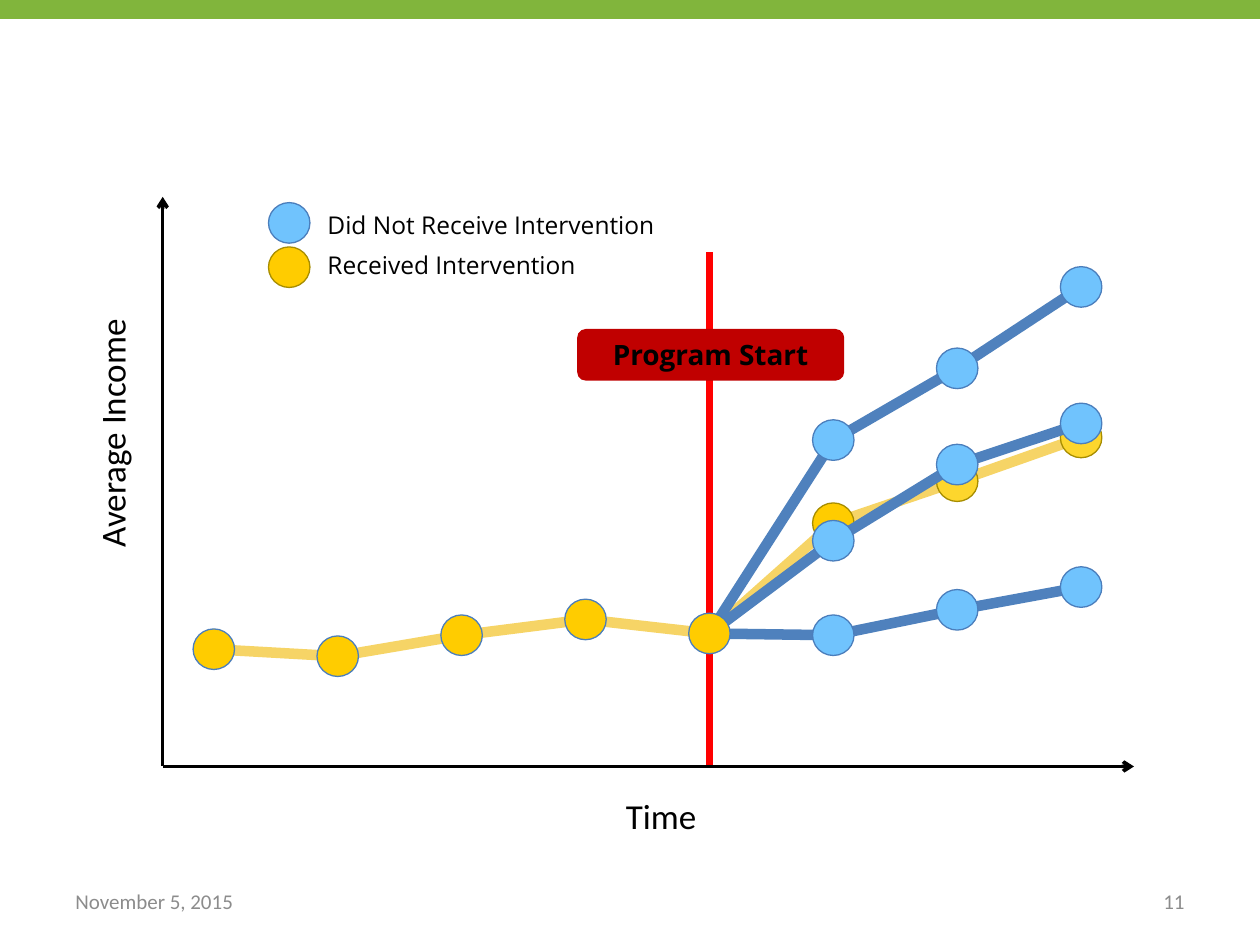
"""Builds a slide charting income over time with and without an intervention."""
from itertools import pairwise

from lxml import etree
from pptx import Presentation
from pptx.dml.color import RGBColor
from pptx.enum import shapes, text
from pptx.oxml import ns
from pptx.util import Pt

COLORS = {
    "band": "81B53C", "footer": "8C8C8C", "black": "000000", "start": "FF0000",
    "label": "C00000", "gold": "FFCC00", "light_gold": "FDD62D",
    "gold_edge": "A78D00", "gold_line": "F6D466", "blue": "70C3FD",
    "blue_edge": "4B7EBC", "blue_line": "4F81BD",
}
DOT_WIDTH, DOT_HEIGHT = 23.7, 23.2
FIRST_X, STEP_X = 122.2, 70.8
START = 4


class IncomeSlide:
    """Holds the style and the current slide."""

    def __init__(self, slide):
        self.slide = slide

    def color(self, name):
        return RGBColor.from_string(COLORS[name])

    def shape(self, kind, left, top, width, height, fill, edge=None):
        item = self.slide.shapes.add_shape(
            kind, Pt(left), Pt(top), Pt(width), Pt(height))
        item.shadow.inherit = False
        item.fill.solid()
        item.fill.fore_color.rgb = self.color(fill)
        if edge:
            item.line.color.rgb = self.color(edge)
            item.line.width = Pt(0.75)
        else:
            item.line.fill.background()
        return item

    def dot(self, x, y, fill, edge):
        self.shape(shapes.MSO_SHAPE.OVAL, x - DOT_WIDTH / 2, y - DOT_HEIGHT / 2,
                   DOT_WIDTH, DOT_HEIGHT, fill, edge)

    def line(self, begin, end, color, width, arrow=None):
        link = self.slide.shapes.add_connector(
            shapes.MSO_CONNECTOR.STRAIGHT, *(Pt(v) for v in (*begin, *end)))
        link.line.color.rgb = self.color(color)
        link.line.width = Pt(width)
        if arrow:
            outline = link._element.spPr.find(ns.qn("a:ln"))
            etree.SubElement(outline, ns.qn(f"a:{arrow}"), type="arrow")
        etree.SubElement(link._element.spPr, ns.qn("a:effectLst"))

    def set_words(self, item, words, size, font="Calibri", color="black", bold=False,
                  align=text.PP_ALIGN.LEFT, wrap=True):
        frame = item.text_frame
        frame.text = words
        frame.word_wrap = wrap
        frame.vertical_anchor = text.MSO_ANCHOR.MIDDLE
        paragraph = frame.paragraphs[0]
        paragraph.alignment = align
        style = paragraph.runs[0].font
        style.name, style.size, style.bold = font, Pt(size), bold
        style.color.rgb = self.color(color)

    def label(self, words, left, top, width, height, size, rotation=0, **style):
        box = self.slide.shapes.add_textbox(Pt(left), Pt(top), Pt(width), Pt(height))
        box.rotation = rotation
        self.set_words(box, words, size, **style)

    def series(self, first, heights, line_color, dots):
        """Draws the joined points, then a dot for each (fill, edge) given."""
        points = [(FIRST_X + STEP_X * (first + i), y) for i, y in enumerate(heights)]
        for begin, end in pairwise(points):
            self.line(begin, end, line_color, 6)
        for point, dot in zip(points, dots):
            if dot:
                self.dot(*point, *dot)


def main():
    deck = Presentation()
    deck.slide_width, deck.slide_height = Pt(720), Pt(540)
    page = IncomeSlide(deck.slides.add_slide(deck.slide_layouts[6]))

    page.shape(shapes.MSO_SHAPE.RECTANGLE, 0, 0, 720, 10.8, "band")
    page.label("November 5, 2015", 36, 500.5, 168, 28.8, 12, color="footer")
    page.label("11", 516, 500.5, 168, 28.8, 12, color="footer",
               align=text.PP_ALIGN.RIGHT)

    start_x, start_y = FIRST_X + STEP_X * START, 362
    axis_x, axis_y = 93, 438
    page.line((start_x, 144), (start_x, axis_y), "start", 4)
    page.line((axis_x, axis_y), (648, axis_y), "black", 2, "tailEnd")
    page.line((axis_x, 112.5), (axis_x, axis_y), "black", 2, "headEnd")
    page.label("Average Income", -9.4, 231, 146.2, 31.5, 20, rotation=270, wrap=False)
    page.label("Time", 350.6, 450, 55.4, 31.5, 20, wrap=False)

    before = ("gold", "blue_edge")
    after = ("gold", "gold_edge")
    later = ("light_gold", "gold_edge")
    untreated = ("blue", "blue_edge")
    page.series(0, [371, 375, 363, 354, start_y, 299, 275, 250], "gold_line",
                [before] * START + [None, after, later, later])
    for outcome in ([251.5, 210.5, 164], [363, 348.5, 335.5], [309, 265.5, 242]):
        page.series(START, [start_y, *outcome], "blue_line", [None] + [untreated] * 3)
    page.dot(start_x, start_y, *before)

    program = page.shape(shapes.MSO_SHAPE.ROUNDED_RECTANGLE,
                         329.8, 188, 152.6, 29.5, "label")
    page.set_words(program, "Program Start", 16, "Open Sans", bold=True,
                   align=text.PP_ALIGN.CENTER)

    legend = [("Did Not Receive Intervention", 115.9, 242, 127.4, untreated),
              ("Received Intervention", 139, 201, 152.7, after)]
    for words, top, width, dot_y, dot in legend:
        page.label(words, 180, top, width, 24.5, 14, font="Open Sans")
        page.dot(165.3, dot_y, *dot)

    deck.save("out.pptx")


if __name__ == "__main__":
    main()
